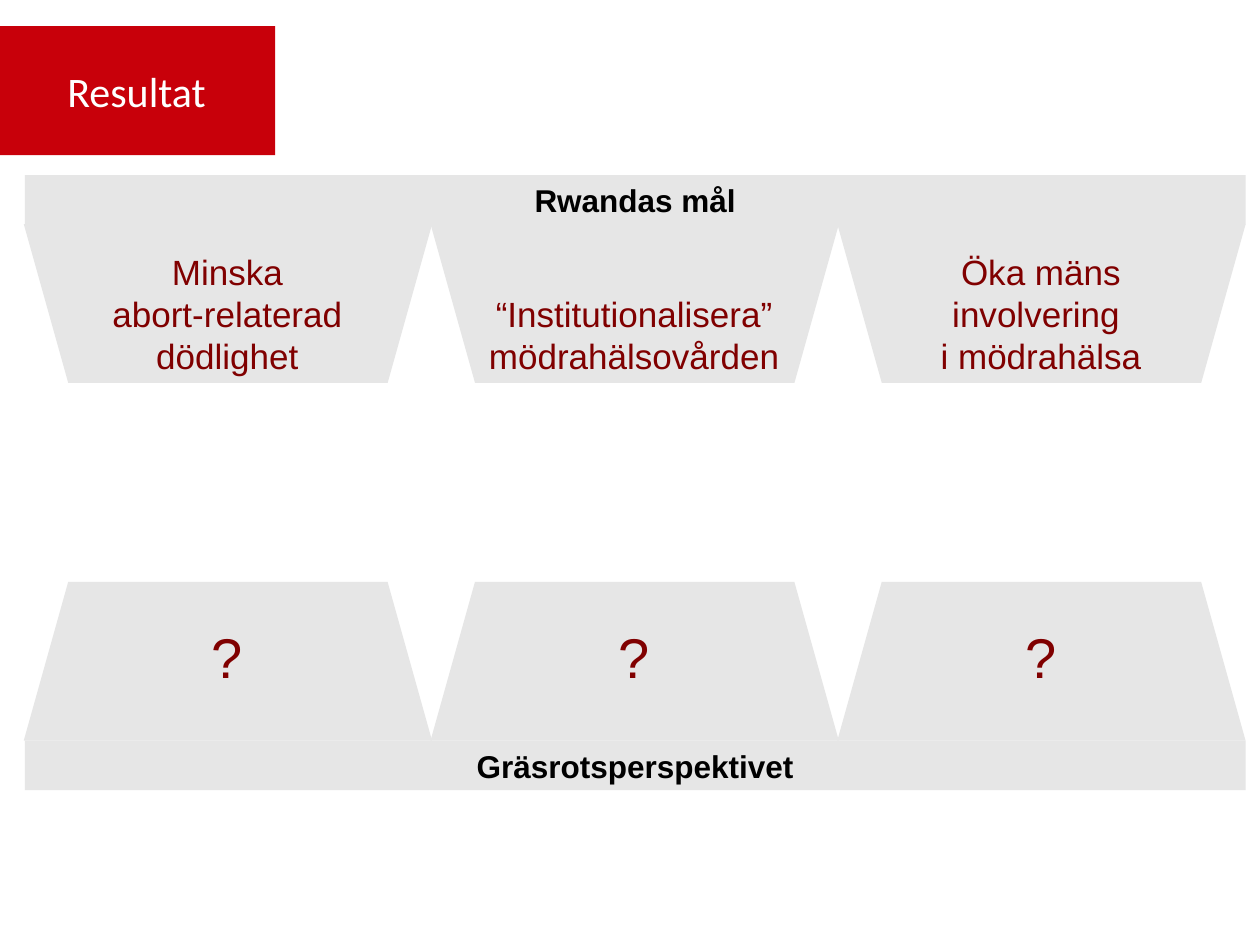
from dataclasses import dataclass

from pptx import Presentation
from pptx.dml.color import RGBColor
from pptx.enum.shapes import MSO_SHAPE as Shp
from pptx.enum.text import MSO_ANCHOR as Anc, PP_ALIGN as Al
from pptx.util import Cm, Pt

COLORS = {"grey": "E6E6E6", "red": "C8000A", "maroon": "800000", "black": "000000", "white": "FFFFFF"}
FORMATS = {
    "bar": {"size": Pt(18), "name": "Arial", "bold": True, "color": "black"},
    "title": {"size": Pt(24), "name": "Calibri", "color": "white"},
    "goal": {"size": Pt(20), "name": "Arial", "color": "maroon"},
    "question": {"size": Pt(32), "name": "Arial", "color": "maroon"},
}
COL_LEFT, COL_STEP, COL_W, ROW_H = 0.48, 8.2, 8.23, 3.2
TEXT_INSET, TEXT_W = 0.41, 7.39
GOAL_TOP, GRASS_TOP = 4.52, 11.73


@dataclass
class Box:
    """A rectangle in centimetres."""
    left: float
    top: float
    width: float
    height: float

    def emu(self) -> list:
        """Return the four lengths for python-pptx."""
        return [Cm(v) for v in (self.left, self.top, self.width, self.height)]


@dataclass
class Row:
    """A row of trapezoids with a text in each."""
    top: float
    rotation: int
    text_h: float
    fmt: str
    anchor: Anc
    texts: tuple


ROWS = (
    Row(GOAL_TOP, 180, ROW_H, "goal", Anc.BOTTOM, (
        ("Minska", "abort-relaterad dödlighet"),
        ("“Institutionalisera” mödrahälsovården",),
        ("Öka mäns", "involvering ", "i mödrahälsa"),
    )),
    Row(GRASS_TOP, 0, 3.0, "question", Anc.MIDDLE, (("?",),) * 3),
)


def rgb(name: str) -> RGBColor:
    """Look up a colour by name."""
    return RGBColor.from_string(COLORS[name])


def write(sp, lines: tuple, fmt: str, anchor: Anc) -> None:
    """Write centred paragraphs in one format."""
    tf = sp.text_frame
    tf.word_wrap, tf.vertical_anchor = True, anchor
    for i, line in enumerate(lines):
        p = tf.add_paragraph() if i else tf.paragraphs[0]
        p.alignment = Al.CENTER
        r = p.add_run()
        r.text = line
        for key, value in FORMATS[fmt].items():
            if key == "color":
                r.font.color.rgb = rgb(value)
            else:
                setattr(r.font, key, value)


def add_shape(s, kind: Shp, box: Box, fill: str):
    """Add a flat shape without outline."""
    sp = s.shapes.add_shape(kind, *box.emu())
    sp.shadow.inherit = False
    sp.fill.solid()
    sp.fill.fore_color.rgb = rgb(fill)
    sp.line.fill.background()
    return sp


def add_bar(s, top: float, text: str) -> None:
    """Add a full-width heading bar."""
    sp = add_shape(s, Shp.RECTANGLE, Box(0.5, top, 24.61, 1), "grey")
    write(sp, (text,), "bar", Anc.TOP)


def add_row(s, row: Row) -> None:
    """Add the trapezoids of a row and their texts."""
    for i, lines in enumerate(row.texts):
        left = COL_LEFT + i * COL_STEP
        sp = add_shape(s, Shp.TRAPEZOID, Box(left, row.top, COL_W, ROW_H), "grey")
        sp.adjustments[0] = 0.28
        sp.rotation = row.rotation
        box = Box(left + TEXT_INSET, row.top, TEXT_W, row.text_h)
        write(s.shapes.add_textbox(*box.emu()), lines, row.fmt, row.anchor)


def main() -> None:
    """Build and save the slide."""
    prs = Presentation()
    prs.slide_width, prs.slide_height = Cm(25.4), Cm(19.05)
    s = prs.slides.add_slide(prs.slide_layouts[6])
    title = add_shape(s, Shp.RECTANGLE, Box(-0.04, 0.53, 5.59, 2.6), "red")
    write(title, ("Resultat",), "title", Anc.MIDDLE)
    add_bar(s, 3.53, "Rwandas mål")
    add_bar(s, 14.93, "Gräsrotsperspektivet")
    for row in ROWS:
        add_row(s, row)
    prs.save("out.pptx")


if __name__ == "__main__":
    main()
